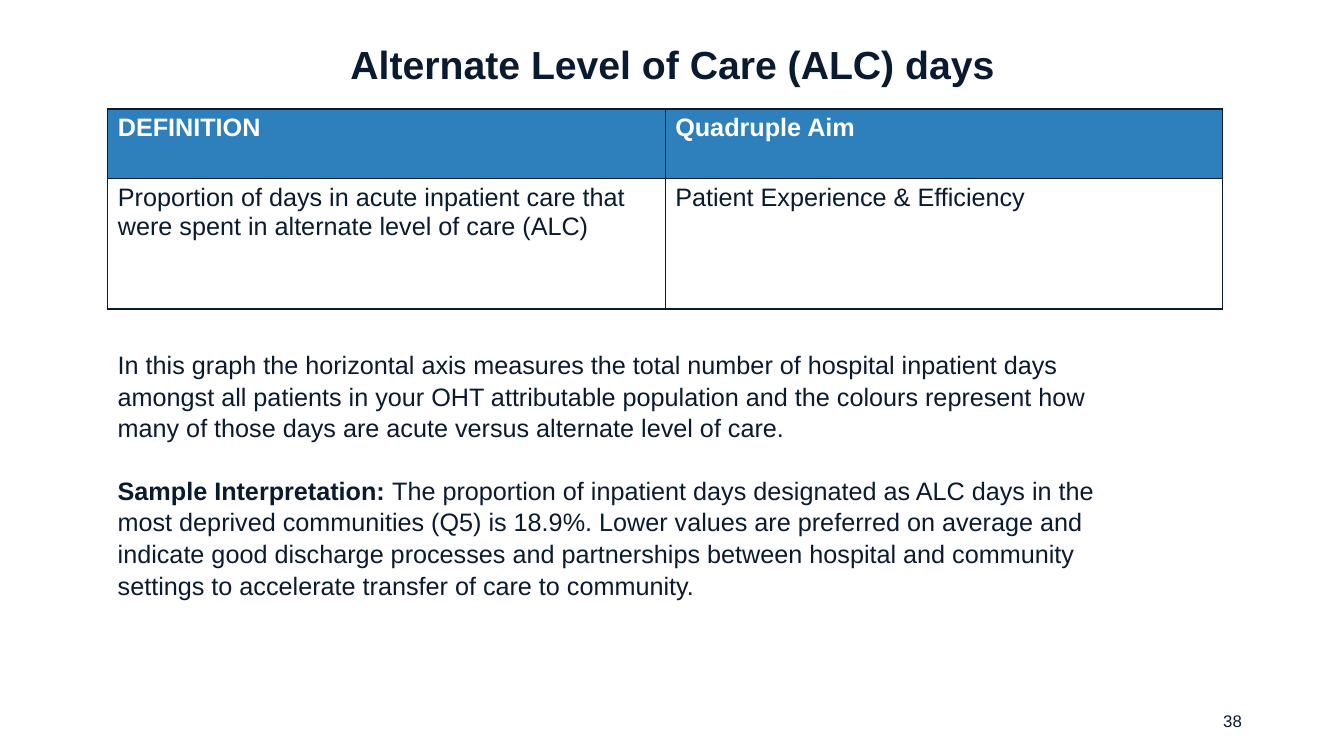
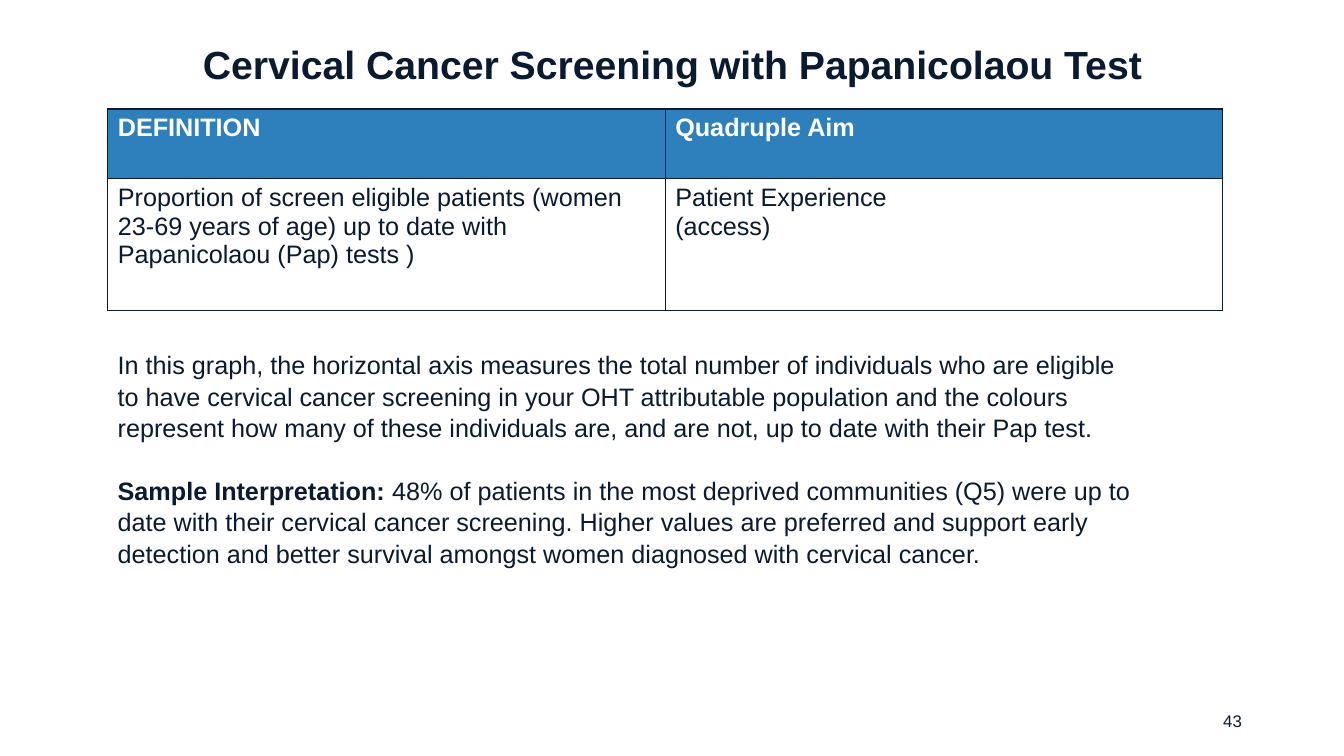
"""Build two indicator definition slides with a shared title, table and number style."""
from dataclasses import dataclass

from lxml import etree
from pptx import Presentation
from pptx.dml.color import RGBColor
from pptx.enum.text import MSO_ANCHOR, PP_ALIGN
from pptx.oxml.ns import qn
from pptx.util import Pt

NAVY = RGBColor(0x0A, 0x1A, 0x31)
BLUE = RGBColor(0x2E, 0x80, 0xBD)
WHITE = RGBColor(0xFF, 0xFF, 0xFF)
LEFT, CENTER, RIGHT = PP_ALIGN.LEFT, PP_ALIGN.CENTER, PP_ALIGN.RIGHT
TOP, MIDDLE = MSO_ANCHOR.TOP, MSO_ANCHOR.MIDDLE

FACE = "Arial"
PLAIN = {"name": FACE, "size": Pt(18), "bold": False}
BOLD = PLAIN | {"bold": True}
TITLE = BOLD | {"size": Pt(28)}
NUMBER = PLAIN | {"size": Pt(12)}
HEADS = ("DEFINITION", "Quadruple Aim")
LABEL = "Sample Interpretation: "
SIDES = ("a:lnL", "a:lnR", "a:lnT", "a:lnB")


@dataclass(frozen=True)
class Topic:
    """Hold the wording of one slide."""
    title: str
    meaning: str
    aim: str
    graph: str
    sample: str
    number: int
    height: float


@dataclass(frozen=True)
class Box:
    """Hold a text area in points with its layout."""
    left: float
    top: float
    width: float
    height: float
    align: PP_ALIGN = LEFT
    anchor: MSO_ANCHOR = TOP
    spacing: float = 1.0


HEADING = Box(55.5, 17.3, 849.6, 60.5, CENTER, MIDDLE, 0.9)
FOOTER = Box(678.2, 500.4, 216, 28.8, RIGHT, MIDDLE)
BODY = Box(77, 244.8, 743, 181, spacing=1.05)
GRID = Box(77, 77.8, 796.4, 143)
HEAD_ROW = 50

TOPICS = (
    Topic(
        "Alternate Level of Care (ALC) days",
        "Proportion of days in acute inpatient care that were spent in "
        "alternate level of care (ALC)",
        "Patient Experience & Efficiency",
        "In this graph the horizontal axis measures the total number of "
        "hospital inpatient days amongst all patients in your OHT attributable "
        "population and the colours represent how many of those days are acute "
        "versus alternate level of care.",
        "The proportion of inpatient days designated as ALC days in the most "
        "deprived communities (Q5) is 18.9%. Lower values are preferred on "
        "average and indicate good discharge processes and partnerships between "
        "hospital and community settings to accelerate transfer of care to "
        "community.",
        38, 93),
    Topic(
        "Cervical Cancer Screening with Papanicolaou Test",
        "Proportion of screen eligible patients (women 23-69 years of age) up "
        "to date with Papanicolaou (Pap) tests )",
        "Patient Experience\n(access)",
        "In this graph, the horizontal axis measures the total number of "
        "individuals who are eligible to have cervical cancer screening in your "
        "OHT attributable population and the colours represent how many of these "
        "individuals are, and are not, up to date with their Pap test.",
        "48% of patients in the most deprived communities (Q5) were up to date "
        "with their cervical cancer screening. Higher values are preferred and "
        "support early detection and better survival amongst women diagnosed "
        "with cervical cancer.",
        43, 94),
)


def style(font, form: dict, color: RGBColor = NAVY) -> None:
    """Apply format values and a colour to a font."""
    for key, value in form.items():
        setattr(font, key, value)
    font.color.rgb = color


def write(slide, box: Box, *paras: list) -> None:
    """Add a text box whose paragraphs are lists of text and format pairs."""
    shape = slide.shapes.add_textbox(
        Pt(box.left), Pt(box.top), Pt(box.width), Pt(box.height))
    frame = shape.text_frame
    frame.word_wrap = True
    frame.vertical_anchor = box.anchor
    for index, runs in enumerate(paras):
        para = frame.add_paragraph() if index else frame.paragraphs[0]
        para.alignment = box.align
        para.line_spacing = box.spacing
        if index:
            para.space_before = Pt(21.7)
        for text, form in runs:
            run = para.add_run()
            run.text = text
            style(run.font, form)


def border(cell) -> None:
    """Draw a thin navy line on each side of a cell."""
    props = cell._tc.get_or_add_tcPr()
    for side in SIDES:
        line = etree.SubElement(props, qn(side), w=str(Pt(1)))
        fill = etree.SubElement(line, qn("a:solidFill"))
        etree.SubElement(fill, qn("a:srgbClr"), val=str(NAVY))


def tabulate(slide, topic: Topic) -> None:
    """Add the table with the definition and the aim."""
    table = slide.shapes.add_table(
        2, 2, Pt(GRID.left), Pt(GRID.top), Pt(GRID.width),
        Pt(HEAD_ROW + topic.height)).table
    rows = (
        (HEAD_ROW, HEADS, BOLD, WHITE, BLUE),
        (topic.height, (topic.meaning, topic.aim), PLAIN, NAVY, WHITE),
    )
    for row, (height, texts, form, ink, back) in zip(table.rows, rows):
        row.height = Pt(height)
        for cell, text in zip(row.cells, texts):
            border(cell)
            cell.fill.solid()
            cell.fill.fore_color.rgb = back
            cell.text = text
            for para in cell.text_frame.paragraphs:
                for run in para.runs:
                    style(run.font, form, ink)


def build(deck, topic: Topic) -> None:
    """Add one slide for a topic."""
    slide = deck.slides.add_slide(deck.slide_layouts[6])
    write(slide, FOOTER, [(str(topic.number), NUMBER)])
    write(slide, HEADING, [(topic.title, TITLE)])
    tabulate(slide, topic)
    write(slide, BODY, [(topic.graph, PLAIN)],
          [(LABEL, BOLD), (topic.sample, PLAIN)])


def main() -> None:
    """Build and save the deck."""
    deck = Presentation()
    deck.slide_width, deck.slide_height = Pt(960), Pt(540)
    for topic in TOPICS:
        build(deck, topic)
    deck.save("out.pptx")


if __name__ == "__main__":
    main()
